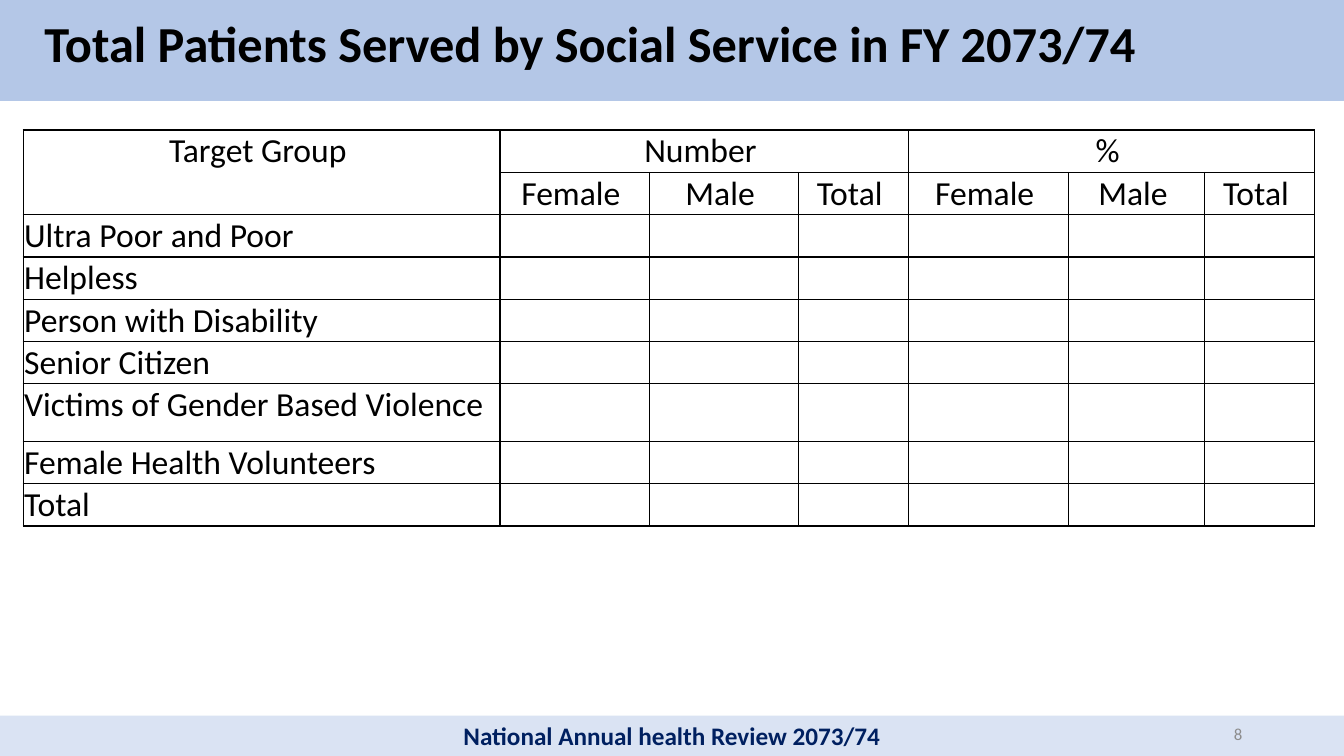
from dataclasses import dataclass

from lxml.etree import SubElement
from pptx import Presentation
from pptx.dml.color import RGBColor
from pptx.enum.shapes import MSO_SHAPE as Shape
from pptx.enum.text import MSO_ANCHOR as Anchor, PP_ALIGN as Align
from pptx.oxml import parse_xml
from pptx.oxml.ns import nsdecls, qn
from pptx.util import Inches, Pt

FONT = "Calibri"
COLORS = {
    "text": "000000",
    "header": "B4C7E7",
    "footer": "DAE3F3",
    "footer_text": "002060",
    "number": "8C8C8C",
    "border": "000000",
}


@dataclass
class Band:
    top: float
    height: float
    color: str
    text: str = ""


BANDS = [
    Band(7.1, 0.4, "footer", "National Annual health Review 2073/74"),
    Band(-0.09, 1.09, "header"),
]
COL_WIDTHS = [4.73, 1.48, 1.48, 1.09, 1.59, 1.35, 1.09]
ROW_HEIGHT, TALL_ROW_HEIGHT = 0.42, 0.57
TALL_GROUP = "Victims of Gender Based Violence"
GROUPS = ["Ultra Poor and Poor", "Helpless", "Person with Disability",
          "Senior Citizen", TALL_GROUP, "Female Health Volunteers", "Total"]
HEADERS = [
    ["Target Group ", "Number ", "", "", "% ", "", ""],
    [""] + ["Female ", "Male ", "Total "] * 2,
]
MERGES = [((0, 0), (1, 0)), ((0, 1), (0, 3)), ((0, 4), (0, 6))]


def format_text(tf, size: int, color: str, align=Align.LEFT, bold=False) -> None:
    for p in tf.paragraphs:
        p.alignment = align
        for r in p.runs:
            r.font.name = FONT
            r.font.size = Pt(size)
            r.font.bold = bold
            r.font.color.rgb = RGBColor.from_string(COLORS[color])


def add_band(slide, band: Band, width: int) -> None:
    sp = slide.shapes.add_shape(
        Shape.RECTANGLE, 0, Inches(band.top), width, Inches(band.height))
    sp.shadow.inherit = False
    sp.fill.solid()
    sp.fill.fore_color.rgb = RGBColor.from_string(COLORS[band.color])
    sp.line.fill.background()
    if band.text:
        sp.text_frame.text = band.text
        sp.text_frame.vertical_anchor = Anchor.MIDDLE
        format_text(sp.text_frame, 18, "footer_text", Align.CENTER, bold=True)


def add_borders(cell) -> None:
    tc_pr = cell._tc.get_or_add_tcPr()
    for i, side in enumerate(("lnL", "lnR", "lnT", "lnB")):
        ln = parse_xml(f'<a:{side} {nsdecls("a")} w="{Pt(1)}"/>')
        fill = SubElement(ln, qn("a:solidFill"))
        SubElement(fill, qn("a:srgbClr"), val=COLORS["border"])
        tc_pr.insert(i, ln)


def add_patient_table(slide) -> None:
    rows = HEADERS + [[group] + [""] * 6 for group in GROUPS]
    heights = [TALL_ROW_HEIGHT if row[0] == TALL_GROUP else ROW_HEIGHT
               for row in rows]
    table = slide.shapes.add_table(
        len(rows), len(COL_WIDTHS), Inches(0.23), Inches(1.29),
        Inches(sum(COL_WIDTHS)), Inches(sum(heights))).table
    table.first_row = table.horz_banding = False
    for col, width in zip(table.columns, COL_WIDTHS):
        col.width = Inches(width)
    for i, (row, height) in enumerate(zip(rows, heights)):
        table.rows[i].height = Inches(height)
        align = Align.CENTER if i < len(HEADERS) else Align.LEFT
        for j, text in enumerate(row):
            cell = table.cell(i, j)
            cell.margin_left = cell.margin_right = cell.margin_top = Inches(0.01)
            cell.margin_bottom = 0
            cell.fill.background()
            add_borders(cell)
            if text:
                cell.text_frame.text = text
                format_text(cell.text_frame, 24, "text", align)
    for first, last in MERGES:
        table.cell(*first).merge(table.cell(*last))


def main() -> None:
    prs = Presentation()
    prs.slide_width, prs.slide_height = Inches(13.33), Inches(7.5)
    slide = prs.slides.add_slide(prs.slide_layouts[5])

    # Bands, with the title raised above them
    for band in BANDS:
        add_band(slide, band, prs.slide_width)
    title = slide.shapes.title
    slide.shapes._spTree.append(title._element)

    # Title
    title.left, title.top = Inches(0.34), 0
    title.width, title.height = Inches(12.89), Inches(0.92)
    tf = title.text_frame
    tf.text = "Total Patients Served by Social Service in FY 2073/74"
    tf.vertical_anchor = Anchor.MIDDLE
    tf.paragraphs[0].line_spacing = 0.9
    format_text(tf, 36, "text", bold=True)

    # Table
    add_patient_table(slide)

    # Slide number
    tf = slide.shapes.add_textbox(
        Inches(9.42), Inches(7.08), Inches(3), Inches(0.4)).text_frame
    tf.word_wrap = True
    tf.text = "8"
    tf.vertical_anchor = Anchor.MIDDLE
    format_text(tf, 12, "number", Align.RIGHT)

    prs.save("out.pptx")


if __name__ == "__main__":
    main()
